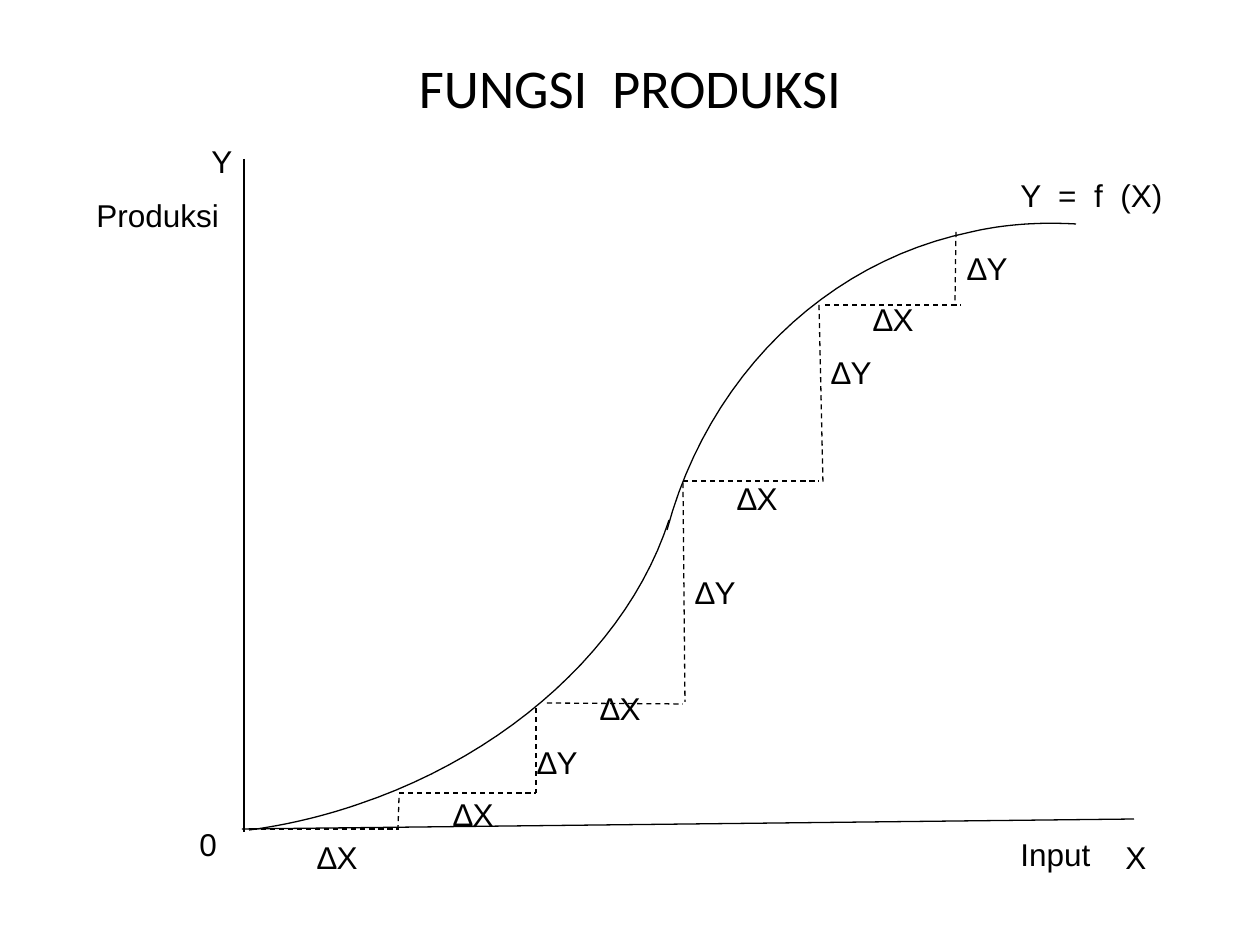
"""Build the production function slide: S-shaped curve, axes and marginal steps."""
import pptx
import pptx.util
import pptx.dml.color
import pptx.enum.dml
import pptx.enum.shapes
import pptx.enum.text
import pptx.oxml

BLACK = pptx.dml.color.RGBColor(0, 0, 0)
SCALE = 914400 / 126
SAMPLES = 24

TITLE = "FUNGSI  PRODUKSI"
AXES = [(244, 159, 244, 832), (242, 829, 1134, 819)]
STEPS = [
    (252, 829, 399, 829), (399, 798, 398, 829),
    (399, 793, 536, 793), (536, 708, 536, 793),
    (547, 703, 683, 704), (683, 483, 685, 702),
    (683, 481, 819, 481), (819, 305, 823, 483),
    (825, 305, 961, 305), (956, 232, 955, 305),
]
ARCS = [
    [(669, 520), (629, 644), (510, 753), (359, 804),
     (324, 816), (287, 825), (249, 830)],
    [(667, 530), (708, 377), (825, 262), (971, 232),
     (1005, 224), (1041, 222), (1076, 224)],
]
NARROW, WIDE = 95, 262
LABELS = [
    ("Y", 199, 136, NARROW), ("Produksi", 84, 190, WIDE),
    ("0", 187, 819, NARROW), ("Input", 1008, 829, WIDE),
    ("X", 1113, 832, NARROW), ("Y  =  f  (X)", 1008, 170, WIDE),
]
DELTAS = {
    "∆X": [(305, 832), (441, 789), (588, 683), (725, 473), (861, 294)],
    "∆Y": [(525, 737), (683, 567), (819, 347), (955, 243)],
}


def emu(px):
    return pptx.util.Emu(round(px * SCALE))


def style_line(line):
    line.color.rgb = BLACK
    line.width = pptx.util.Pt(0.75)


def add_line(s, ends, dashed=False):
    c = s.shapes.add_connector(
        pptx.enum.shapes.MSO_CONNECTOR.STRAIGHT, *map(emu, ends))
    style_line(c.line)
    if dashed:
        c.line.dash_style = pptx.enum.dml.MSO_LINE.DASH
    c._element.spPr.append(pptx.oxml.parse_xml(
        '<a:effectLst xmlns:a="http://schemas.openxmlformats.org/drawingml/2006/main"/>'))


def bezier(a, b, c, d):
    for i in range(1, SAMPLES + 1):
        t = i / SAMPLES
        u = 1 - t
        yield tuple(
            round((u**3 * a[k] + 3 * u * u * t * b[k]
                   + 3 * u * t * t * c[k] + t**3 * d[k]) * SCALE)
            for k in (0, 1))


def add_arc(s, points):
    builder = s.shapes.build_freeform(*map(emu, points[0]))
    for i in range(0, len(points) - 1, 3):
        builder.add_line_segments(bezier(*points[i:i + 4]), close=False)
    sp = builder.convert_to_shape()
    sp.shadow.inherit = False
    sp.fill.background()
    style_line(sp.line)


def add_run(p, text, font, size):
    r = p.add_run()
    r.text = text
    r.font.name = font
    r.font.size = pptx.util.Pt(size)
    r.font.color.rgb = BLACK


def add_label(s, text, x, y, width):
    tf = s.shapes.add_textbox(emu(x), emu(y), emu(width), emu(50)).text_frame
    tf.word_wrap = True
    add_run(tf.paragraphs[0], text, "Arial", 18)


def main():
    prs = pptx.Presentation()
    prs.slide_width, prs.slide_height = emu(1260), emu(945)
    s = prs.slides.add_slide(prs.slide_layouts[5])

    title = s.shapes.title
    title.left, title.top, title.width, title.height = map(emu, (63, 38, 1134, 98))
    tf = title.text_frame
    tf.vertical_anchor = pptx.enum.text.MSO_ANCHOR.MIDDLE
    p = tf.paragraphs[0]
    p.alignment = pptx.enum.text.PP_ALIGN.CENTER
    add_run(p, TITLE, "Calibri", 31.2)

    for ends in AXES:
        add_line(s, ends)
    for points in ARCS:
        add_arc(s, points)
    for ends in STEPS:
        add_line(s, ends, dashed=True)
    for label in LABELS:
        add_label(s, *label)
    for text, places in DELTAS.items():
        for x, y in places:
            add_label(s, text, x, y, NARROW)

    prs.save("out.pptx")


if __name__ == "__main__":
    main()
